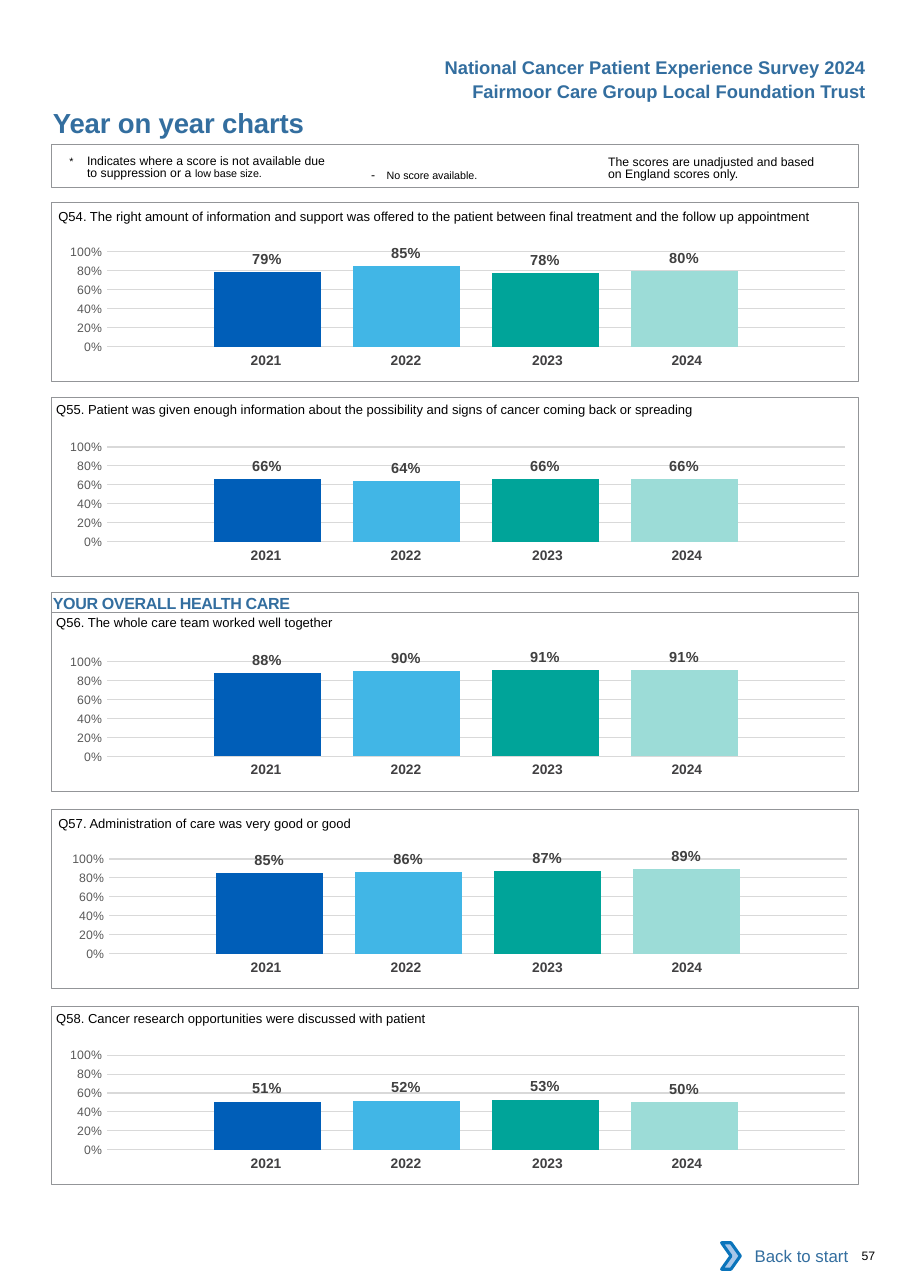
from lxml import etree
from pptx import Presentation
from pptx.chart.data import CategoryChartData
from pptx.dml.color import RGBColor
from pptx.enum import chart as ch, shapes, text
from pptx.oxml import parse_xml
from pptx.oxml.ns import nsdecls, qn
from pptx.util import Inches, Pt

BLUE = RGBColor(0x33, 0x6E, 0x9F)
BLACK = RGBColor(0, 0, 0)
WHITE = RGBColor(0xFF, 0xFF, 0xFF)
FRAME = RGBColor(0x93, 0x95, 0x98)
GRID = RGBColor(0xD9, 0xD9, 0xD9)
AXIS_TEXT = RGBColor(0x59, 0x59, 0x59)
LABEL_TEXT = RGBColor(0x40, 0x40, 0x40)
YEAR_TEXT = RGBColor(0x41, 0x40, 0x42)
CHEVRON_FILL = RGBColor(0xA8, 0xC7, 0xE9)
CHEVRON_LINE = RGBColor(0x0A, 0x74, 0xBB)
BAR_COLORS = [RGBColor(0x00, 0x5E, 0xB8), RGBColor(0x41, 0xB6, 0xE6),
              RGBColor(0x00, 0xA4, 0x99), RGBColor(0x9C, 0xDC, 0xD7)]

LEFT, WIDTH, PANEL_HEIGHT = 0.47, 7.32, 1.62
YEARS = ["2021", "2022", "2023", "2024"]
YEAR_COLUMNS = [(1.27, 0), (1.27, 0), (1.34, 0.04), (1.27, 0.12)]  # width, right margin

# panel top, chart left, question left and top, question, scores by year
PANELS = [
    (1.84, 0.39, 0.53, 1.80, "Q54. The right amount of information and support was offered to the "
     "patient between final treatment and the follow up appointment", (0.79, 0.85, 0.78, 0.80)),
    (3.61, 0.39, 0.51, 3.55, "Q55. Patient was given enough information about the possibility and "
     "signs of cancer coming back or spreading", (0.66, 0.64, 0.66, 0.66)),
    (5.56, 0.39, 0.51, 5.49, "Q56. The whole care team worked well together",
     (0.88, 0.90, 0.91, 0.91)),
    (7.35, 0.41, 0.53, 7.31, "Q57. Administration of care was very good or good",
     (0.85, 0.86, 0.87, 0.89)),
    (9.13, 0.39, 0.51, 9.08, "Q58. Cancer research opportunities were discussed with patient",
     (0.51, 0.52, 0.53, 0.50)),
]


def write(tf, words, size=8, color=BLACK, bold=False, align=None, leading=None,
          margins=(0, 0, 0, 0), wrap=True, anchor=text.MSO_ANCHOR.TOP, spacing=0):
    """Append a run to the first paragraph; margins are left, top, right, bottom."""
    tf.margin_left, tf.margin_top, tf.margin_right, tf.margin_bottom = map(Inches, margins)
    tf.word_wrap, tf.vertical_anchor = wrap, anchor
    p = tf.paragraphs[0]
    p.alignment = align
    if leading:
        p.line_spacing = Pt(leading)
    r = p.add_run()
    r.text = words
    r.font.name, r.font.size, r.font.bold = "Arial", Pt(size), bold
    r.font.color.rgb = color
    if spacing:
        r.font._element.set("spc", str(round(spacing * 100)))
    return p


def add_box(kind, at, fill=None, line=None, weight=0.5):
    sp = s.shapes.add_shape(kind, *map(Inches, at))
    sp.shadow.inherit = False
    if fill is None:
        sp.fill.background()
    else:
        sp.fill.solid()
        sp.fill.fore_color.rgb = fill
    if line is None:
        sp.line.fill.background()
    else:
        sp.line.color.rgb, sp.line.width = line, Pt(weight)
    return sp


prs = Presentation()
prs.slide_width, prs.slide_height = Inches(8.26), Inches(11.69)
s = prs.slides.add_slide(prs.slide_layouts[5])
RECT = shapes.MSO_SHAPE.RECTANGLE
RIGHT = text.PP_ALIGN.RIGHT

# Headings
title = s.shapes.title
title.left, title.top, title.width, title.height = map(Inches, (LEFT, 0.96, 4.5, 0.3))
write(title.text_frame, "Year on year charts", size=18, color=BLUE, bold=True,
      align=text.PP_ALIGN.LEFT, margins=(0.01, 0, 0, 0), spacing=-0.1)
for top, words in [(0.46, "National Cancer Patient Experience Survey 2024"),
                   (0.68, "Fairmoor Care Group Local Foundation Trust")]:
    heading = s.shapes.add_textbox(*map(Inches, (3.92, top, 4.04, 0.3)))
    write(heading.text_frame, words, size=12, color=BLUE, bold=True, align=RIGHT,
          margins=(0.1, 0.05, 0.1, 0.05), wrap=False)

# Key to the scores
add_box(RECT, (LEFT, 1.31, WIDTH, 0.39), line=FRAME, weight=0.75)
KEY = [
    ((0.63, 1.38, 2.38, 0.27), 8.1,
     [("*\t", 7, 0), ("Indicates where a score is not available due to suppression or a ", 8, 0),
      ("low base size.", 7, 0)]),
    ((3.37, 1.49, 1.73, 0.16), None, [("- ", 8, 2.6), ("No score available.", 7, 0)]),
    ((5.52, 1.39, 1.95, 0.27), 8.1,
     [("The scores are unadjusted and based on England scores only.", 8, 0)]),
]
for at, leading, runs in KEY:
    note = s.shapes.add_textbox(*map(Inches, at))
    for words, size, spacing in runs:
        p = write(note.text_frame, words, size=size, leading=leading, spacing=spacing,
                  margins=(0, 0.03, 0, 0))
    if runs[0][0].startswith("*"):
        pPr = p._p.get_or_add_pPr()
        pPr.set("marL", str(Inches(0.16)))
        pPr.set("indent", str(-Inches(0.16)))

# Section heading
section = add_box(RECT, (LEFT, 5.38, WIDTH, 0.18), line=FRAME)
write(section.text_frame, "YOUR OVERALL HEALTH CARE", size=10.5, color=BLUE, bold=True,
      align=text.PP_ALIGN.LEFT, margins=(0.01, 0.01, 0, 0), spacing=-0.2)

# Question panels
for top, chart_left, question_left, question_top, question, scores in PANELS:
    add_box(RECT, (LEFT, top, WIDTH, PANEL_HEIGHT), line=FRAME)

    data = CategoryChartData(number_format="0%")
    data.categories = ["1"]
    for n, score in enumerate(scores, 1):
        data.add_series(f"Series {n}", [score])
    chart = s.shapes.add_chart(ch.XL_CHART_TYPE.COLUMN_CLUSTERED,
                               *map(Inches, (chart_left, top + 0.26, WIDTH, 1.29)), data).chart
    chart.has_legend = chart.has_title = False
    chart.font.name, chart.font.size = "Calibri", Pt(10)
    chart.font.color.rgb = BLACK
    chart.category_axis.visible = False

    axis = chart.value_axis
    axis.minimum_scale, axis.maximum_scale, axis.major_unit = 0, 1, 0.2
    axis.major_tick_mark = axis.minor_tick_mark = ch.XL_TICK_MARK.NONE
    axis.format.line.fill.background()
    grid = axis.major_gridlines.format.line
    grid.color.rgb, grid.width = GRID, Pt(0.75)
    ticks = axis.tick_labels
    ticks.number_format, ticks.number_format_is_linked = "0%", False
    ticks.font.name, ticks.font.size = "Arial", Pt(8)
    ticks.font.color.rgb = AXIS_TEXT

    plot = chart.plots[0]
    plot.gap_width, plot.overlap, plot.vary_by_categories = 200, -30, False
    for series, color in zip(plot.series, BAR_COLORS):
        series.format.fill.solid()
        series.format.fill.fore_color.rgb = color
        labels = series.data_labels
        labels.show_value, labels.position = True, ch.XL_LABEL_POSITION.OUTSIDE_END
        labels.number_format, labels.number_format_is_linked = "0%", False
        labels.font.name, labels.font.size, labels.font.bold = "Arial", Pt(9.5), True
        labels.font.color.rgb = LABEL_TEXT

    plot_area = chart._chartSpace.chart.plotArea
    for old in plot_area.findall(qn("c:layout")):
        plot_area.remove(old)
    layout = parse_xml(f'<c:layout {nsdecls("c")}><c:manualLayout/></c:layout>')
    for tag, val in [("layoutTarget", "inner"), ("xMode", "edge"), ("yMode", "edge"),
                     ("x", "0.079"), ("y", "0.145"), ("w", "0.915"), ("h", "0.666")]:
        etree.SubElement(layout[0], qn(f"c:{tag}")).set("val", val)
    plot_area.insert(0, layout)

    table = s.shapes.add_table(1, 4, *map(Inches, (1.73, top + 1.31, 5.15, 0.27))).table
    table.first_row = table.horz_banding = False
    table._tbl.tblPr.find(qn("a:tableStyleId")).text = "{2D5ABB26-0587-4C30-8999-92F81FD0307C}"
    for i, (year, (width, right)) in enumerate(zip(YEARS, YEAR_COLUMNS)):
        table.columns[i].width = Inches(width)
        cell = table.cell(0, i)
        cell.fill.background()
        write(cell.text_frame, year, size=9, color=YEAR_TEXT, bold=True,
              align=text.PP_ALIGN.CENTER)
        cell.margin_left, cell.margin_right = Inches(0.1), Inches(right)
        cell.margin_top = cell.margin_bottom = Inches(0.05)

    box = s.shapes.add_textbox(*map(Inches, (question_left, question_top, 7.25, 0.24)))
    write(box.text_frame, question, size=8.5, margins=(0, 0.09, 0, 0))

# Footer
back = add_box(RECT, (6.62, 11.19, 1.18, 0.42), fill=WHITE)
write(back.text_frame, "Back to start", size=11, color=BLUE, align=RIGHT,
      margins=(0.1, 0.05, 0.1, 0.05), anchor=text.MSO_ANCHOR.MIDDLE)
add_box(shapes.MSO_SHAPE.CHEVRON, (6.55, 11.28, 0.17, 0.24), fill=CHEVRON_FILL,
        line=CHEVRON_LINE, weight=2)
page = s.shapes.add_textbox(*map(Inches, (7.82, 11.33, 0.4, 0.13)))
write(page.text_frame, "57")

prs.save("out.pptx")
